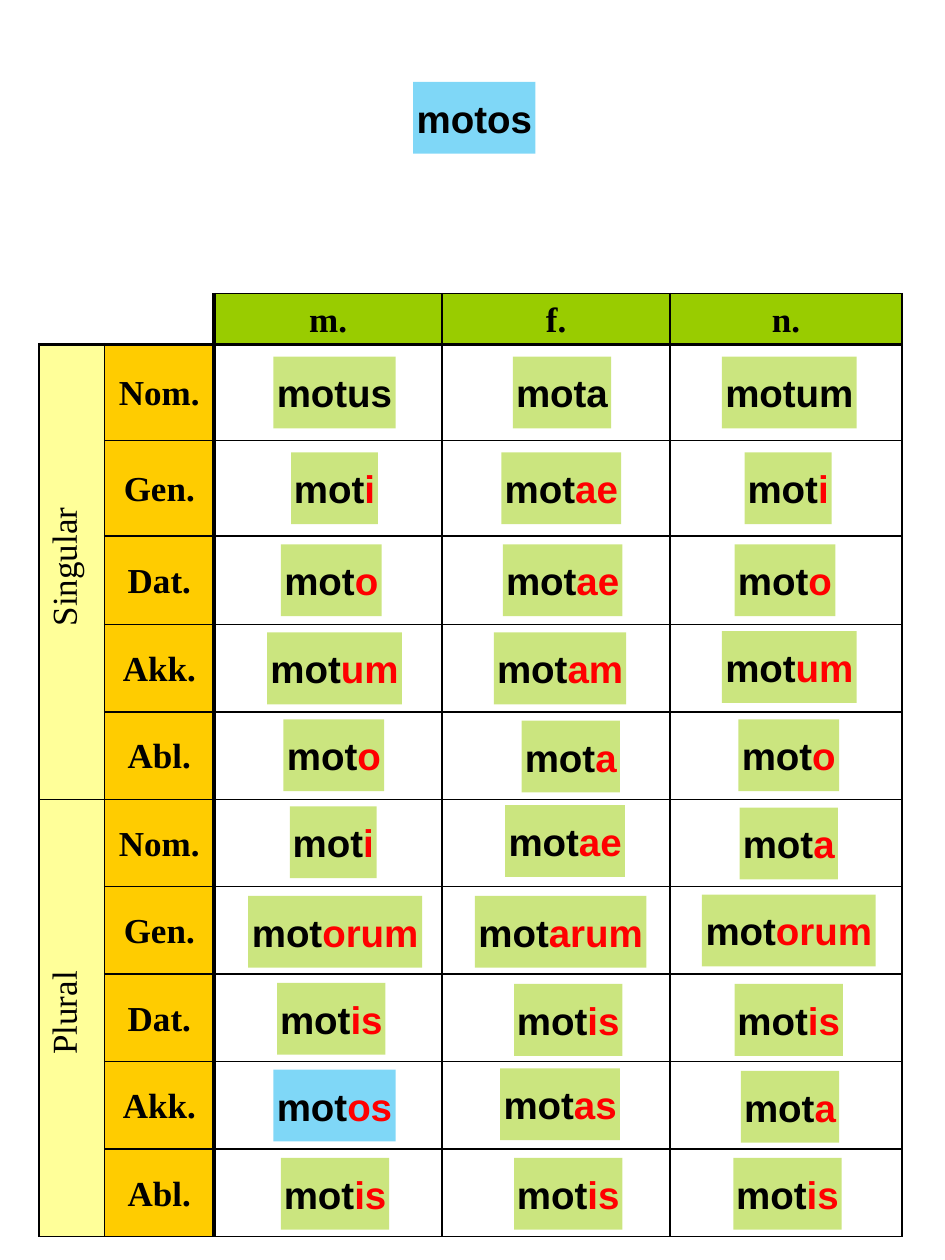
from lxml import etree
from pptx import Presentation
from pptx.dml.color import RGBColor
from pptx.enum.shapes import MSO_SHAPE
from pptx.enum.text import MSO_ANCHOR, MSO_AUTO_SIZE, PP_ALIGN
from pptx.oxml.ns import qn
from pptx.util import Inches, Pt

RECTANGLE = MSO_SHAPE.RECTANGLE
MIDDLE = MSO_ANCHOR.MIDDLE
CENTER = PP_ALIGN.CENTER
FIT_SHAPE = MSO_AUTO_SIZE.SHAPE_TO_FIT_TEXT

THEME = {
    "ink": "000000", "ending": "FF0000", "gender": "99CC00", "number": "FFFF99",
    "case": "FFCC00", "form": "99CC00", "sought": "00B0F0", "opacity": 50,
    "table_font": "Times New Roman", "table_size": 20,
    "form_font": "Arial", "form_size": 22, "thin": 1, "thick": 2.25,
}

GENDERS = ["m.", "f.", "n."]
NUMBERS = ["Singular", "Plural"]
CASES = ["Nom.", "Gen.", "Dat.", "Akk.", "Abl."]

SOUGHT = ("mot", "os")
QUESTION = ("motos", "", 3.28, 0.65)
FORMS = [
    ("motus", "", 2.17, 2.83), ("mota", "", 4.07, 2.83), ("motum", "", 5.73, 2.83),
    ("mot", "i", 2.31, 3.59), ("mot", "ae", 3.98, 3.59), ("mot", "i", 5.91, 3.59),
    ("mot", "o", 2.23, 4.32), ("mot", "ae", 3.99, 4.32), ("mot", "o", 5.83, 4.32),
    ("mot", "um", 2.12, 5.02), ("mot", "am", 3.92, 5.02), ("mot", "um", 5.73, 5.01),
    ("mot", "o", 2.25, 5.71), ("mot", "a", 4.14, 5.72), ("mot", "o", 5.86, 5.71),
    ("mot", "i", 2.3, 6.4), ("mot", "ae", 4.01, 6.39), ("mot", "a", 5.87, 6.41),
    ("mot", "orum", 1.97, 7.11), ("mot", "arum", 3.77, 7.11), ("mot", "orum", 5.57, 7.1),
    ("mot", "is", 2.2, 7.8), ("mot", "is", 4.08, 7.81), ("mot", "is", 5.83, 7.81),
    ("mot", "os", 2.17, 8.49), ("mot", "as", 3.97, 8.48), ("mot", "a", 5.88, 8.5),
    ("mot", "is", 2.23, 9.19), ("mot", "is", 4.08, 9.19), ("mot", "is", 5.82, 9.19),
]
FORM_WIDTHS = {
    "moti": 0.69, "mota": 0.78, "moto": 0.8, "motis": 0.86, "motae": 0.95, "motas": 0.95,
    "motos": 0.97, "motus": 0.97, "motam": 1.05, "motum": 1.07, "motarum": 1.36, "motorum": 1.38,
}
FORM_HEIGHT = 0.57

TABLE_LEFT, TABLE_TOP, TABLE_HEIGHT = 0.31, 2.33, 7.48
COLUMN_WIDTHS = [0.52, 0.87, 1.81, 1.81, 1.84]
TALL_ROWS = [0.4, 0.76, 0.76, 0.7]
EVEN_ROWS = 1 + len(NUMBERS) * len(CASES) - len(TALL_ROWS)
ROW_HEIGHTS = TALL_ROWS + [(TABLE_HEIGHT - sum(TALL_ROWS)) / EVEN_ROWS] * EVEN_ROWS


def style_run(run, font, size, color, bold):
    run.font.name = font
    run.font.size = Pt(size)
    run.font.bold = bold
    run.font.color.rgb = RGBColor.from_string(color)


def set_borders(cell, row, column):
    corner = row == 0 and column < 2
    heavy = {"L": column == 2, "R": column == 1, "T": row == 1, "B": row == 0}
    for side, is_heavy in heavy.items():
        line = etree.SubElement(cell._tc.get_or_add_tcPr(), qn(f"a:ln{side}"))
        if corner and (side in "LT" or side == "R" and column == 0):
            etree.SubElement(line, qn("a:noFill"))
            continue
        line.set("w", str(Pt(THEME["thick" if is_heavy else "thin"])))
        fill = etree.SubElement(line, qn("a:solidFill"))
        etree.SubElement(fill, qn("a:srgbClr"), val=THEME["ink"])


def write_label(cell, label, role):
    cell.fill.solid()
    cell.fill.fore_color.rgb = RGBColor.from_string(THEME[role])
    cell.vertical_anchor = MIDDLE
    cell.margin_left = cell.margin_right = Inches(0.06)
    cell.margin_top = cell.margin_bottom = Inches(0.03)
    cell.text_frame.text = label
    paragraph = cell.text_frame.paragraphs[0]
    paragraph.alignment = CENTER
    paragraph.line_spacing = 1.07
    style_run(paragraph.runs[0], THEME["table_font"], THEME["table_size"],
              THEME["ink"], role != "number")
    if role == "number":
        cell._tc.tcPr.set("vert", "vert270")
        paragraph._p.get_or_add_pPr().set("marL", str(Inches(0.08)))


def add_declension(slide):
    table = slide.shapes.add_table(
        len(ROW_HEIGHTS), len(COLUMN_WIDTHS), Inches(TABLE_LEFT), Inches(TABLE_TOP),
        Inches(sum(COLUMN_WIDTHS)), Inches(TABLE_HEIGHT)).table
    table.first_row = table.horz_banding = False
    for column, width in zip(table.columns, COLUMN_WIDTHS):
        column.width = Inches(width)
    for row, height in zip(table.rows, ROW_HEIGHTS):
        row.height = Inches(height)
    for row in range(len(ROW_HEIGHTS)):
        for column in range(len(COLUMN_WIDTHS)):
            cell = table.cell(row, column)
            set_borders(cell, row, column)
            cell.fill.background()
    table.cell(0, 0).merge(table.cell(0, 1))
    for column, gender in enumerate(GENDERS, 2):
        write_label(table.cell(0, column), gender, "gender")
    for index, number in enumerate(NUMBERS):
        first = 1 + index * len(CASES)
        table.cell(first, 0).merge(table.cell(first + len(CASES) - 1, 0))
        write_label(table.cell(first, 0), number, "number")
        for row, case in enumerate(CASES, first):
            write_label(table.cell(row, 1), case, "case")


def add_form(slide, stem, ending, left, top, role):
    card = slide.shapes.add_shape(
        RECTANGLE, Inches(left), Inches(top),
        Inches(FORM_WIDTHS[stem + ending]), Inches(FORM_HEIGHT))
    card.shadow.inherit = False
    card.line.fill.background()
    card.fill.solid()
    card.fill.fore_color.rgb = RGBColor.from_string(THEME[role])
    color = card._element.spPr.find(qn("a:solidFill"))[0]
    etree.SubElement(color, qn("a:alpha"), val=str(THEME["opacity"] * 1000))
    frame = card.text_frame
    frame.word_wrap = False
    frame.auto_size = FIT_SHAPE
    frame.margin_left = frame.margin_right = Inches(0.02)
    frame.margin_top = frame.margin_bottom = Inches(0.1)
    paragraph = frame.paragraphs[0]
    paragraph.alignment = CENTER
    for part, part_color in ((stem, "ink"), (ending, "ending")):
        if part:
            run = paragraph.add_run()
            run.text = part
            style_run(run, THEME["form_font"], THEME["form_size"], THEME[part_color], True)


def main():
    deck = Presentation()
    deck.slide_width, deck.slide_height = Inches(7.5), Inches(10)
    slide = deck.slides.add_slide(deck.slide_layouts[6])
    add_declension(slide)
    for form in FORMS:
        add_form(slide, *form, "sought" if form[:2] == SOUGHT else "form")
    add_form(slide, *QUESTION, "sought")
    deck.save("out.pptx")


if __name__ == "__main__":
    main()
